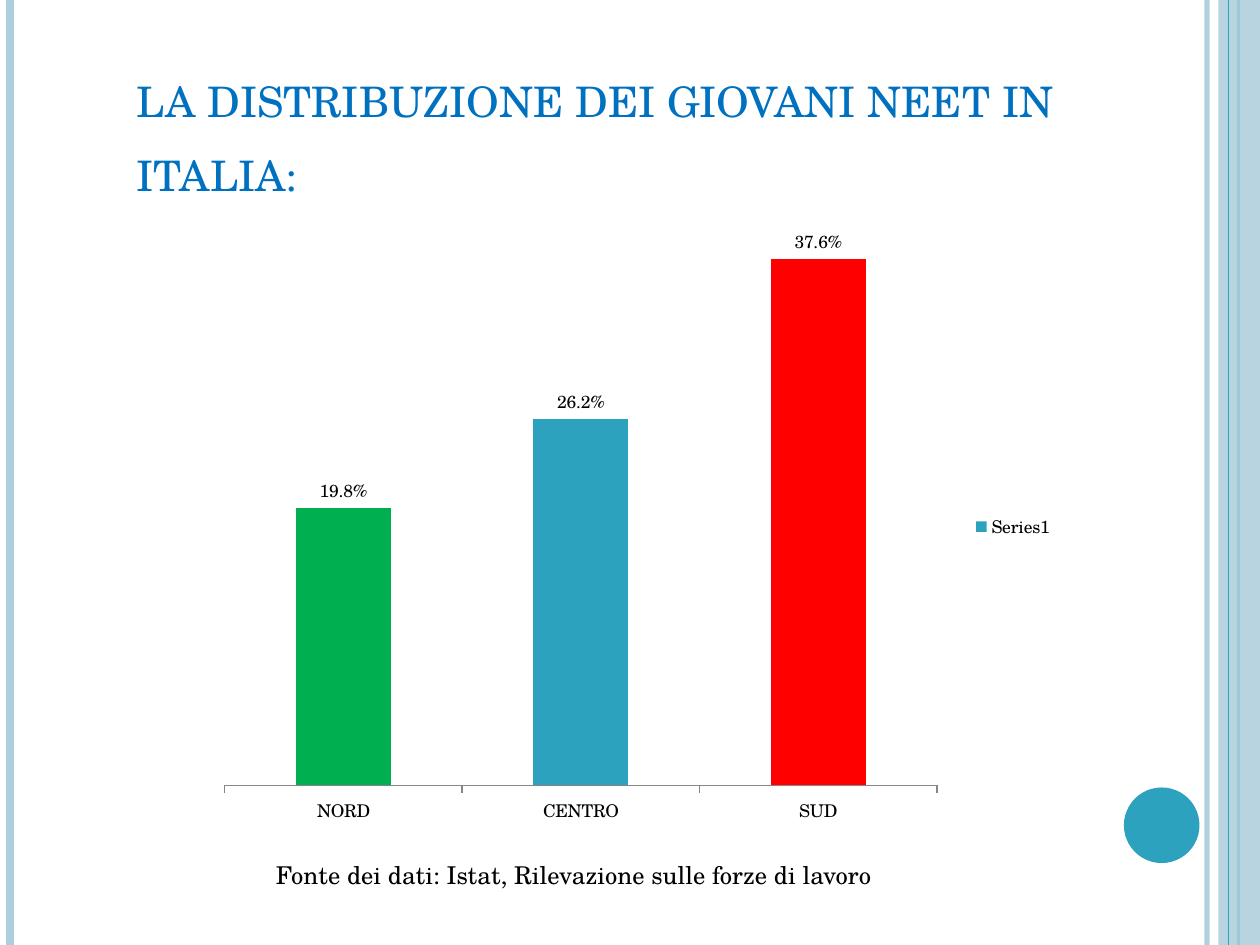
from lxml import etree
from pptx import Presentation
from pptx.chart.data import CategoryChartData
from pptx.dml.color import RGBColor
from pptx.enum.chart import XL_CHART_TYPE as ChartType, XL_LABEL_POSITION as LabelPosition
from pptx.enum.chart import XL_LEGEND_POSITION as LegendPosition, XL_TICK_LABEL_POSITION as TickLabels
from pptx.enum.chart import XL_TICK_MARK as TickMark
from pptx.enum.shapes import MSO_CONNECTOR as Connector, MSO_SHAPE as Shape
from pptx.oxml.ns import qn
from pptx.util import Inches, Pt

FONT = "TeX Gyre Schola"
PALE = RGBColor(0xAD, 0xCE, 0xDC)
TEAL = RGBColor(0x2D, 0xA2, 0xBF)
BLUE = RGBColor(0x00, 0x70, 0xC0)
GREEN = RGBColor(0x00, 0xB0, 0x50)
RED = RGBColor(0xFF, 0x00, 0x00)
GRAY = RGBColor(0x86, 0x86, 0x86)
BLACK = RGBColor(0x00, 0x00, 0x00)
WHITE = RGBColor(0xFF, 0xFF, 0xFF)


def set_font(font, size, color):
    for name, value in {"name": FONT, "size": Pt(size)}.items():
        setattr(font, name, value)
    font.color.rgb = color


def set_opacity(properties, percent):
    color = next(properties.iter(qn("a:srgbClr")))
    etree.SubElement(color, qn("a:alpha")).set("val", str(percent * 1000))


presentation = Presentation()
presentation.slide_width = Inches(10)
presentation.slide_height = Inches(7.5)
slide = presentation.slides.add_slide(presentation.slide_layouts[6])
shapes = slide.shapes

# Side decoration: vertical rules, right band and circle
band = shapes.add_shape(Shape.RECTANGLE, Inches(9.67), 0, Inches(0.33), Inches(7.5))
circle = shapes.add_shape(Shape.OVAL, Inches(8.92), Inches(6.25), Inches(0.6), Inches(0.6))
for shape, color in ((band, PALE), (circle, TEAL)):
    shape.shadow.inherit = False
    shape.fill.solid()
    shape.fill.fore_color.rgb = color
    shape.line.fill.background()
set_opacity(band.fill._xPr, 87)

for x, color, width, opacity in (
    (9.58, PALE, 3, 93),
    (0.08, PALE, 4.5, 100),
    (9.83, TEAL, 1.5, 100),
    (9.75, TEAL, 0.75, 100),
):
    rule = shapes.add_connector(Connector.STRAIGHT, Inches(x), 0, Inches(x), Inches(7.5))
    rule.line.color.rgb = color
    rule.line.width = Pt(width)
    properties = rule._element.spPr
    if opacity < 100:
        set_opacity(properties, opacity)
    etree.SubElement(properties, qn("a:effectLst"))
    if x == 9.83:
        # This rule lies behind the band
        band._element.addprevious(rule._element)

# Title in a single-cell table
table = shapes.add_table(1, 1, Inches(0.98), Inches(0.41), Inches(7.8), Inches(0.84)).table
table.first_row = table.horz_banding = False
cell = table.cell(0, 0)
cell.fill.solid()
cell.fill.fore_color.rgb = WHITE
paragraph = cell.text_frame.paragraphs[0]
paragraph.line_spacing = 1.2
title = paragraph.add_run()
title.text = "LA DISTRIBUZIONE DEI GIOVANI NEET IN ITALIA:"
set_font(title.font, 24, BLUE)

# Column chart of NEET shares
data = CategoryChartData(number_format="0.0%")
data.categories = ["NORD", "CENTRO", "SUD"]
data.add_series("Series1", [0.198, 0.262, 0.376])
chart = shapes.add_chart(
    ChartType.COLUMN_CLUSTERED, Inches(1.77), Inches(1.78), Inches(6.69), Inches(4.8), data
).chart
set_font(chart.font, 10, BLACK)
chart.has_title = False
chart.has_legend = True
chart.legend.position = LegendPosition.RIGHT
chart.legend.include_in_layout = False

value_axis = chart.value_axis
for name, value in {
    "minimum_scale": 0,
    "maximum_scale": 0.4,
    "has_major_gridlines": False,
    "visible": False,
}.items():
    setattr(value_axis, name, value)
category_axis = chart.category_axis
category_axis.major_tick_mark = TickMark.OUTSIDE
category_axis.tick_label_position = TickLabels.NEXT_TO_AXIS
category_axis.format.line.color.rgb = GRAY

plot = chart.plots[0]
plot.gap_width = 150
plot.vary_by_categories = False
plot.has_data_labels = True
for name, value in {
    "show_value": True,
    "number_format": "0.0%",
    "number_format_is_linked": False,
    "position": LabelPosition.OUTSIDE_END,
}.items():
    setattr(plot.data_labels, name, value)

series = plot.series[0]
series.invert_if_negative = False
for part, color in ((series, TEAL), (series.points[0], GREEN), (series.points[2], RED)):
    part.format.fill.solid()
    part.format.fill.fore_color.rgb = color

# Fixed inner plot area
plot_area = chart._chartSpace.chart.plotArea
for old_layout in plot_area.findall(qn("c:layout")):
    plot_area.remove(old_layout)
layout = etree.Element(qn("c:layout"))
manual = etree.SubElement(layout, qn("c:manualLayout"))
for tag, value in (
    ("layoutTarget", "inner"), ("xMode", "edge"), ("yMode", "edge"),
    ("x", 0.002), ("y", 0.002), ("w", 0.845), ("h", 0.926),
):
    etree.SubElement(manual, qn(f"c:{tag}")).set("val", str(value))
plot_area.insert(0, layout)

# Data source note
note = shapes.add_textbox(Inches(2.09), Inches(6.78), Inches(4.98), Inches(0.34))
note.text_frame.word_wrap = False
source = note.text_frame.paragraphs[0].add_run()
source.text = "Fonte dei dati: Istat, Rilevazione sulle forze di lavoro"
set_font(source.font, 14, BLACK)

presentation.save("out.pptx")
